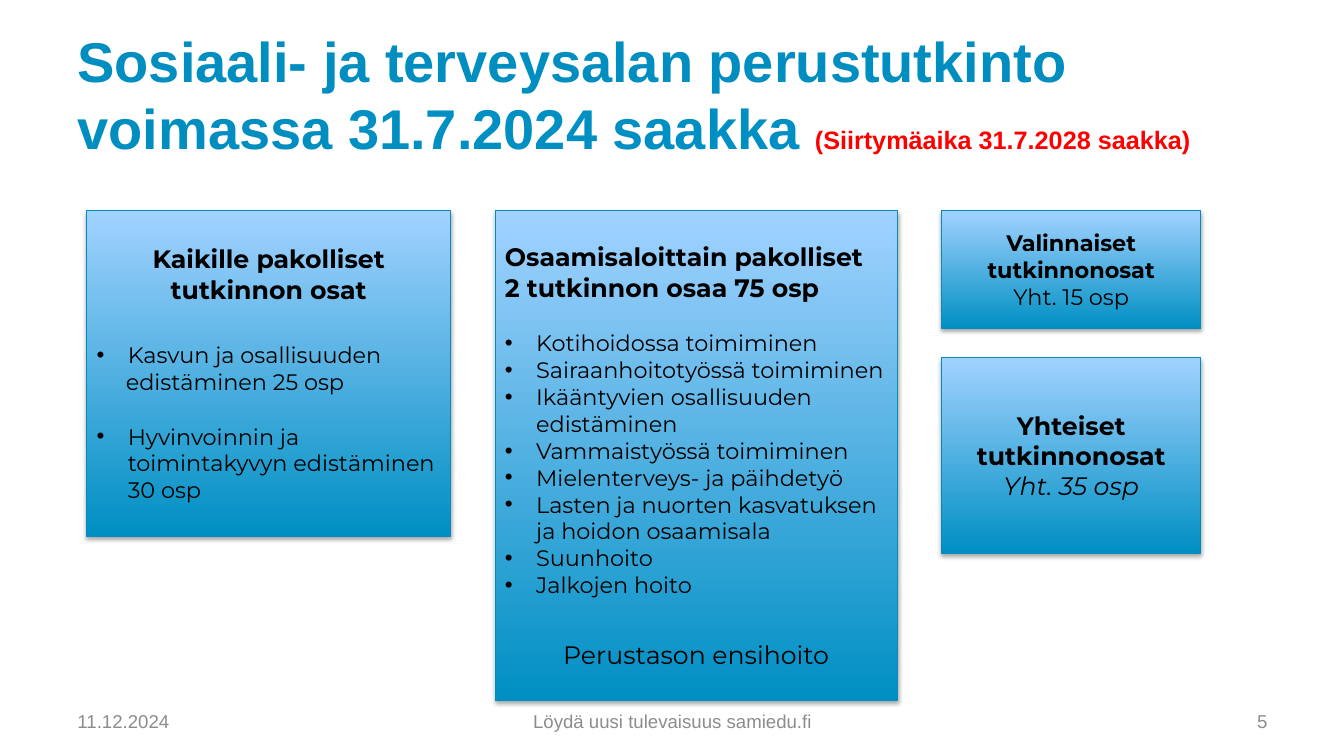
from lxml.etree import SubElement
from pptx import Presentation
from pptx.dml.color import RGBColor
from pptx.enum.shapes import MSO_SHAPE
from pptx.enum.text import MSO_ANCHOR, PP_ALIGN
from pptx.oxml import parse_xml
from pptx.oxml.ns import nsdecls, qn
from pptx.util import Inches, Pt

ALIGN = {"l": PP_ALIGN.LEFT, "c": PP_ALIGN.CENTER, "r": PP_ALIGN.RIGHT}
SHADOW = (
    f'<a:effectLst {nsdecls("a")}>'
    '<a:outerShdw blurRad="39370" dist="22860" dir="5400000" rotWithShape="0">'
    '<a:srgbClr val="000000"><a:alpha val="35000"/></a:srgbClr>'
    '</a:outerShdw></a:effectLst>'
)


def paint(code):
    return RGBColor.from_string(code)


def write(frame, text, size=16, color="000000", font="Montserrat", bold=False,
          ital=False, align="l", before=0, left=0, hang=0, join=False):
    par = frame.paragraphs[-1]
    if par.runs and not join:
        par = frame.add_paragraph()
    if not join:
        par.alignment = ALIGN[align]
        par.space_before = Pt(before)
        props = par._p.get_or_add_pPr()
        props.set("marL", str(Inches(left)))
        props.set("indent", str(Inches(-hang)))
        if hang:
            SubElement(props, qn("a:buFont")).set("typeface", "Arial")
            SubElement(props, qn("a:buChar")).set("char", "•")
        else:
            SubElement(props, qn("a:buNone"))
    run = par.add_run()
    run.text = text
    run.font.size = Pt(size)
    run.font.name = font
    run.font.bold = bold
    run.font.italic = ital
    run.font.color.rgb = paint(color)


class Deck:
    blue = "008FC3"
    pale = "A1D2FF"
    edge = "008CBF"
    gray = "8C8C8C"

    def __init__(self):
        self.file = Presentation()
        self.file.slide_width = Inches(13.33)
        self.file.slide_height = Inches(7.5)
        self.slide = self.file.slides.add_slide(self.file.slide_layouts[6])

    def label(self, *place):
        frame = self.slide.shapes.add_textbox(*map(Inches, place)).text_frame
        return self.setup(frame)

    def box(self, *place):
        shape = self.slide.shapes.add_shape(
            MSO_SHAPE.FLOWCHART_PROCESS, *map(Inches, place))
        shape.fill.gradient()
        shape.fill.gradient_angle = 90
        for stop, code in zip(shape.fill.gradient_stops, (self.blue, self.pale)):
            stop.color.rgb = paint(code)
        shape.line.color.rgb = paint(self.edge)
        shape.line.width = Pt(0.75)
        shape._element.spPr.append(parse_xml(SHADOW))
        return self.setup(shape.text_frame)

    def setup(self, frame):
        frame.word_wrap = True
        frame.vertical_anchor = MSO_ANCHOR.MIDDLE
        return frame

    def heads(self, frame, *lines, size=18, align="c"):
        for line in lines:
            write(frame, line, size=size, bold=True, align=align)

    def points(self, frame, *lines, before=0):
        for line in lines:
            write(frame, line, left=0.31, hang=0.31, before=before)
            before = 0

    def foot(self, text, left, width, align):
        write(self.label(left, 6.95, width, 0.4), text, size=13.3,
              color=self.gray, font="Arial", align=align)


def main():
    deck = Deck()

    title = deck.label(0.67, 0.3, 11.59, 1.25)
    write(title, "Sosiaali- ja terveysalan perustutkinto voimassa ",
          size=40, color="008DBF", font="Arial", bold=True)
    write(title, "31.7.2024 saakka ",
          size=40, color=deck.blue, font="Arial", bold=True, join=True)
    write(title, "(Siirtymäaika 31.7.2028 saakka)",
          size=18, color="FF0000", font="Arial", bold=True, join=True)

    deck.foot("11.12.2024", 0.67, 3.11, "l")
    deck.foot("Löydä uusi tulevaisuus samiedu.fi", 4.56, 4.22, "c")
    deck.foot("5", 9.56, 3.11, "r")

    core = deck.box(0.86, 2.09, 3.61, 3.23)
    deck.heads(core, "Kaikille pakolliset", "tutkinnon osat")
    deck.points(core, "Kasvun ja osallisuuden", before=26.8)
    write(core, "edistäminen 25 osp", left=0.29)
    deck.points(core, "Hyvinvoinnin ja toimintakyvyn edistäminen 30 osp",
                before=19.5)

    field = deck.box(4.91, 2.09, 3.99, 4.86)
    deck.heads(field, "Osaamisaloittain pakolliset", "2 tutkinnon osaa 75 osp",
               align="l")
    deck.points(
        field,
        "Kotihoidossa toimiminen",
        "Sairaanhoitotyössä toimiminen",
        "Ikääntyvien osallisuuden edistäminen",
        "Vammaistyössä toimiminen",
        "Mielenterveys- ja päihdetyö",
        "Lasten ja nuorten kasvatuksen ja hoidon osaamisala",
        "Suunhoito",
        "Jalkojen hoito",
        before=19.5,
    )
    write(field, "Perustason ensihoito", size=18, align="c", before=29.3)

    choice = deck.box(9.34, 2.09, 2.57, 1.17)
    deck.heads(choice, "Valinnaiset", "tutkinnonosat", size=16)
    write(choice, "Yht. 15 osp", align="c")

    common = deck.box(9.34, 3.55, 2.57, 1.94)
    deck.heads(common, "Yhteiset tutkinnonosat")
    write(common, "Yht. 35 osp", size=18, ital=True, align="c")

    deck.file.save("out.pptx")


if __name__ == "__main__":
    main()
